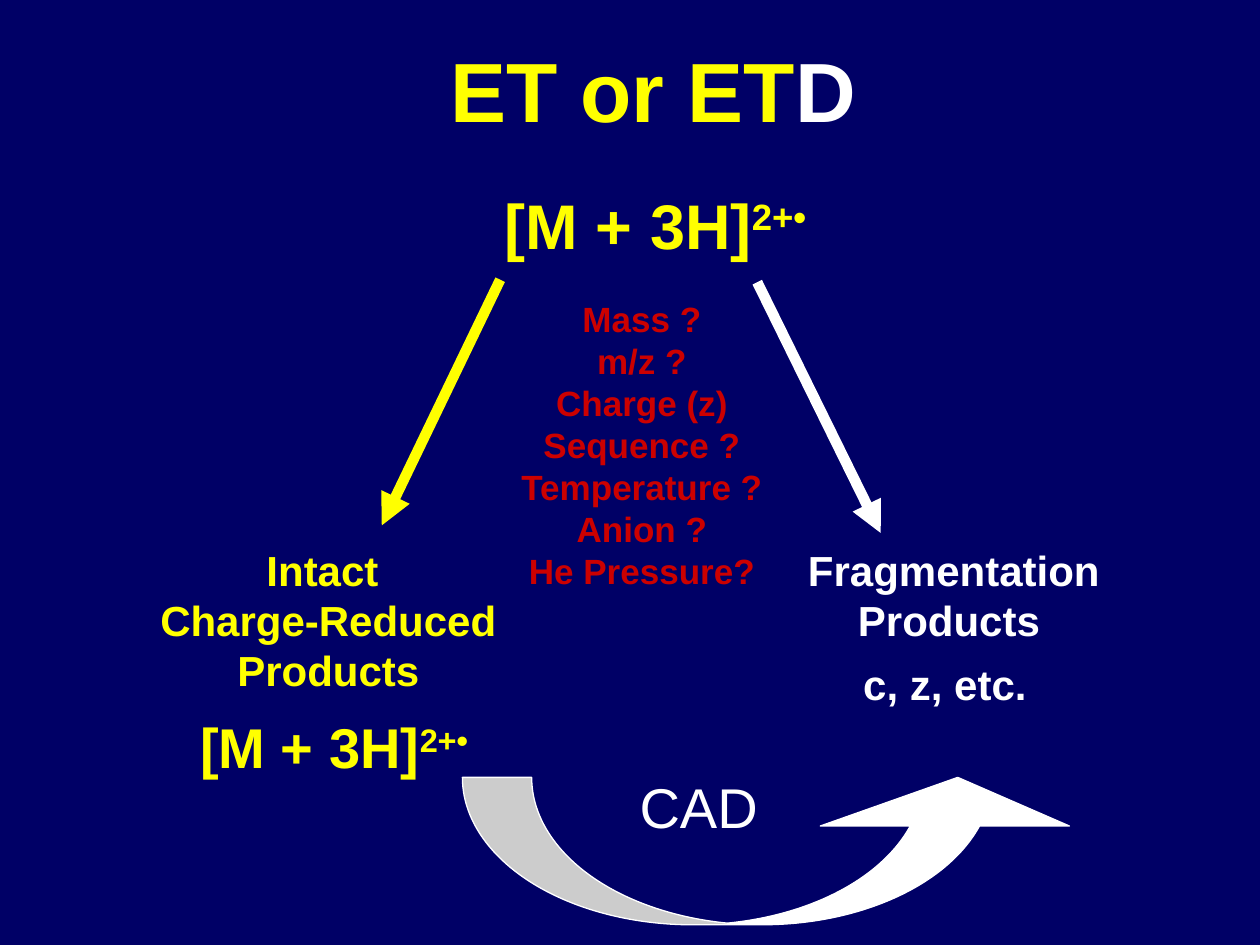
from lxml import etree
from pptx import Presentation
from pptx.dml.color import RGBColor
from pptx.enum.shapes import MSO_CONNECTOR, MSO_SHAPE
from pptx.enum.text import MSO_AUTO_SIZE, PP_ALIGN
from pptx.oxml.ns import qn
from pptx.util import Inches, Pt

STRAIGHT = MSO_CONNECTOR.STRAIGHT
CURVED_ARROW = MSO_SHAPE.CURVED_UP_ARROW
FIT_TEXT = MSO_AUTO_SIZE.SHAPE_TO_FIT_TEXT
LEFT, CENTER = PP_ALIGN.LEFT, PP_ALIGN.CENTER

COLORS = {
    "background": "000066",
    "yellow": "FFFF00",
    "white": "FFFFFF",
    "red": "CC0000",
}
QUESTIONS = ["Mass ?", "m/z ?", "Charge (z)", "Sequence ?",
             "Temperature ?", "Anion ?", "He Pressure?"]


def rgb(name):
    return RGBColor.from_string(COLORS[name])


def add_run(paragraph, text, size, color, bold=True, superscript=False):
    run = paragraph.add_run()
    run.text = text
    values = {"name": "Arial", "size": Pt(size), "bold": bold}
    for attribute, value in values.items():
        setattr(run.font, attribute, value)
    run.font.color.rgb = rgb(color)
    if superscript:
        run._r.get_or_add_rPr().set("baseline", "30000")


def add_text(slide, box, lines, align=CENTER, wrap=False):
    """Add a text box; each line is a list of run argument tuples."""
    shape = slide.shapes.add_textbox(*map(Inches, box))
    frame = shape.text_frame
    frame.word_wrap = wrap
    frame.auto_size = FIT_TEXT
    for index, runs in enumerate(lines):
        paragraph = frame.add_paragraph() if index else frame.paragraphs[0]
        paragraph.alignment = align
        for run in runs:
            add_run(paragraph, *run)


def add_ion(slide, box, size):
    """Add the ion formula with its raised charge."""
    add_text(slide, box, [[("[M + 3H]", size, "yellow"),
                           ("2+•", size, "yellow", True, True)]], LEFT)


def add_arrow(slide, start, end, color):
    points = map(Inches, (*start, *end))
    arrow = slide.shapes.add_connector(STRAIGHT, *points)
    arrow.line.color.rgb = rgb(color)
    arrow.line.width = Pt(6)
    etree.SubElement(arrow.line._get_or_add_ln(), qn("a:tailEnd"), type="triangle")
    etree.SubElement(arrow._element.spPr, qn("a:effectLst"))


def add_curved_arrow(slide, box, adjustments):
    shape = slide.shapes.add_shape(CURVED_ARROW, *map(Inches, box))
    for index, value in enumerate(adjustments):
        shape.adjustments[index] = value
    shape.shadow.inherit = False
    shape.fill.solid()
    shape.fill.fore_color.rgb = rgb("white")
    shape.line.color.rgb = rgb("white")
    shape.line.width = Pt(0.75)


def main():
    presentation = Presentation()
    presentation.slide_width = Inches(10)
    presentation.slide_height = Inches(7.5)
    slide = presentation.slides.add_slide(presentation.slide_layouts[6])
    slide.background.fill.solid()
    slide.background.fill.fore_color.rgb = rgb("background")

    add_ion(slide, (3.91, 1.43, 2.66, 0.7), 36)
    add_arrow(slide, (6.01, 2.24), (6.99, 4.23), "white")
    add_ion(slide, (1.49, 5.61, 2.38, 0.63), 32)
    add_text(slide, (1.08, 4.27, 2.96, 1.3),
             [[(line, 24, "yellow")]
              for line in ("Intact", " Charge-Reduced", " Products")])
    add_text(slide, (4.03, 2.31, 2.13, 2.43),
             [[(question, 20, "red")] for question in QUESTIONS])
    add_arrow(slide, (3.97, 2.22), (3.03, 4.17), "yellow")
    add_text(slide, (6.31, 4.27, 2.52, 0.9),
             [[("Fragmentation", 24, "white")],
              [("Products", 24, "white"), (" ", 20, "white")]])
    add_text(slide, (5.67, 5.18, 3.66, 0.5),
             [[("c, z, etc.", 24, "white")]], wrap=True)
    add_text(slide, (3.32, 0.26, 3.58, 0.9),
             [[(" ", 40, "white"), ("ET or ET", 48, "yellow"),
               ("D", 48, "white")]], LEFT)
    add_curved_arrow(slide, (3.67, 6.17, 4.92, 1.17), (0.47, 1.69, 0.33))
    add_text(slide, (4.92, 6.08, 1.25, 0.63),
             [[("CAD", 32, "white", False)]], wrap=True)
    presentation.save("out.pptx")


if __name__ == "__main__":
    main()
